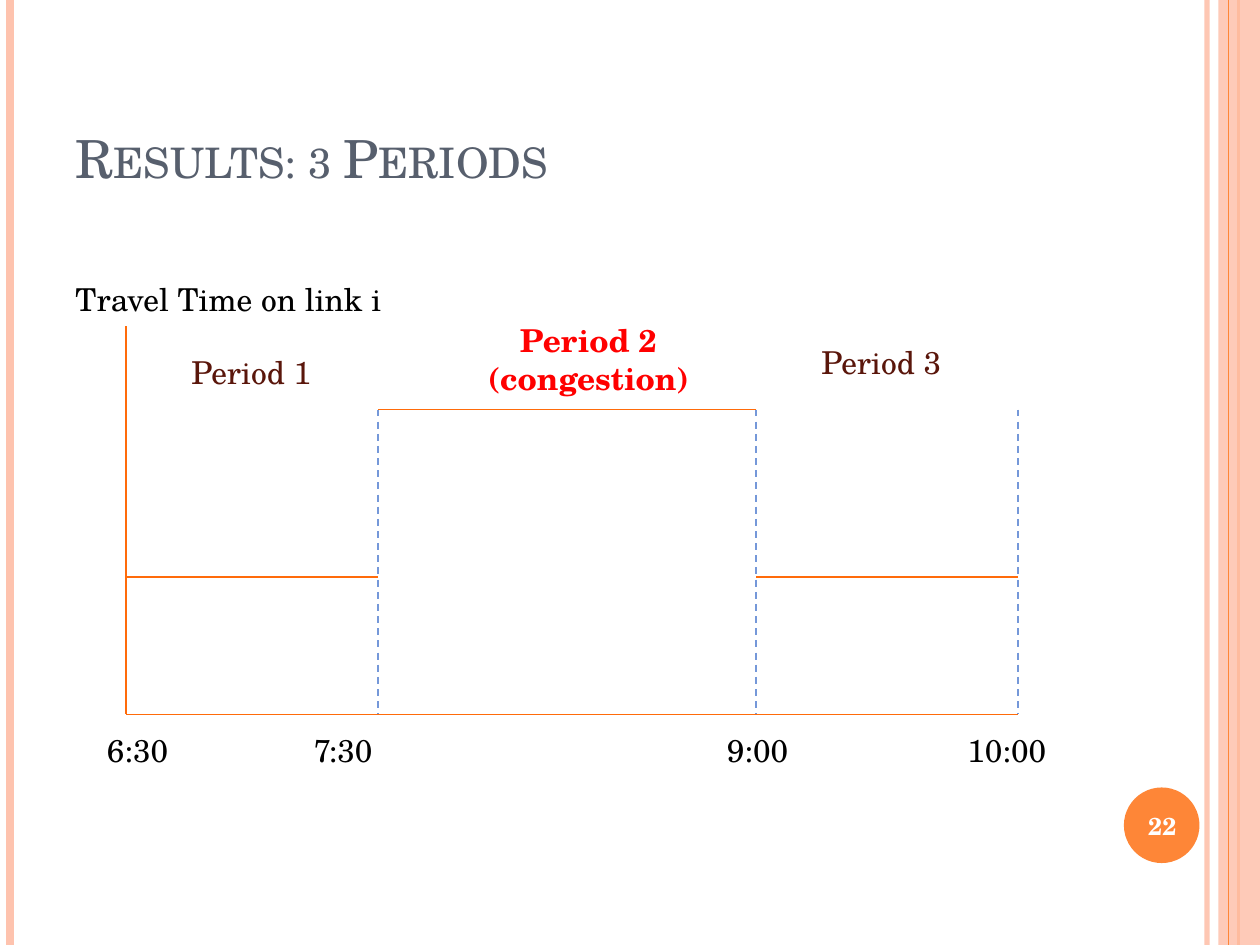
from pptx import Presentation
from pptx.dml.color import RGBColor
from pptx.enum.dml import MSO_LINE
from pptx.enum.shapes import MSO_CONNECTOR, MSO_SHAPE
from pptx.enum.text import MSO_ANCHOR, PP_ALIGN
from pptx.oxml.ns import qn
from pptx.util import Inches, Pt
from lxml import etree

STRAIGHT = MSO_CONNECTOR.STRAIGHT
RECT, OVAL = MSO_SHAPE.RECTANGLE, MSO_SHAPE.OVAL
DASH = MSO_LINE.DASH
LEFT, CENTER = PP_ALIGN.LEFT, PP_ALIGN.CENTER
TOP, MIDDLE, BOTTOM = MSO_ANCHOR.TOP, MSO_ANCHOR.MIDDLE, MSO_ANCHOR.BOTTOM
FONT = "TeX Gyre Schola"
WIDE, HIGH = 10, 7.5
PINK, ORANGE, AXIS, BLUE = "FEC3AE", "FE8637", "FF6B0A", "7598D9"
BLACK, BROWN, RED, WHITE, SLATE = "000000", "5A160B", "FF0000", "FFFFFF", "575F6D"

TITLE = "Results: 3 Periods"
BARS = [(9.58, PINK, 3, 93), (0.08, PINK, 4.5, 100), (9.83, ORANGE, 1.5, 100)]
TIMES = [("6:30", 0.75, 0.69), ("7:30", 2.39, 0.69),
         ("9:00", 5.67, 0.69), ("10:00", 7.58, 0.83)]
NAMES = [("Travel Time on link i", (0.5, 2.17, 2.83, 0.4), BLACK, LEFT, False),
         ("Period 1", (1.42, 2.75, 1.5, 0.42), BROWN, LEFT, False),
         ("Period 2 (congestion)", (3.67, 2.5, 2, 0.71), RED, CENTER, True),
         ("Period 3", (6.42, 2.67, 1.5, 0.42), BROWN, LEFT, False)]
EDGES = [1, 3, 6, 8.08]
LOW, PEAK, BASE, HEAD = 4.58, 3.25, 5.67, 2.59
LEVELS = [LOW, PEAK, LOW]


def paint(color, code):
    color.rgb = RGBColor.from_string(code)


def fade(fill, alpha):
    tone = fill._xPr.find(".//" + qn("a:srgbClr"))
    etree.SubElement(tone, qn("a:alpha")).set("val", str(alpha * 1000))


def rule(x1, y1, x2, y2, code, width=1, dash=None, alpha=100):
    line = slide.shapes.add_connector(STRAIGHT, *map(Inches, (x1, y1, x2, y2)))
    paint(line.line.color, code)
    line.line.width = Pt(width)
    if dash:
        line.line.dash_style = dash
    if alpha < 100:
        fade(line.line.fill, alpha)
    etree.SubElement(line._element.spPr, qn("a:effectLst"))


def block(kind, box, code, alpha=100):
    shape = slide.shapes.add_shape(kind, *map(Inches, box))
    shape.shadow.inherit = False
    shape.fill.solid()
    paint(shape.fill.fore_color, code)
    shape.line.fill.background()
    if alpha < 100:
        fade(shape.fill, alpha)


def write(frame, text, size, code, align=LEFT, bold=False, anchor=TOP, wrap=True):
    frame.word_wrap = wrap
    frame.vertical_anchor = anchor
    par = frame.paragraphs[0]
    par.alignment = align
    run = par.add_run()
    run.text = text
    run.font.name, run.font.size, run.font.bold = FONT, Pt(size), bold
    paint(run.font.color, code)
    return run


def label(text, box, *args, **more):
    frame = slide.shapes.add_textbox(*map(Inches, box)).text_frame
    write(frame, text, *args, **more)


deck = Presentation()
deck.slide_width, deck.slide_height = Inches(WIDE), Inches(HIGH)
slide = deck.slides.add_slide(deck.slide_layouts[5])

for x, code, width, alpha in BARS:
    rule(x, 0, x, HIGH, code, width, alpha=alpha)
block(RECT, (9.67, 0, 0.33, HIGH), PINK, 87)
rule(9.75, 0, 9.75, HIGH, ORANGE, 0.75)
block(OVAL, (8.92, 6.25, 0.6, 0.6), ORANGE)

title = slide.shapes.title
title.left, title.top, title.width, title.height = map(Inches, (0.5, 0.3, 8.17, 1.25))
run = write(title.text_frame, TITLE, 30, SLATE, anchor=BOTTOM)
run.font._element.set("cap", "small")
label("22", (8.89, 6.27, 0.67, 0.57), 14, WHITE, CENTER, True, MIDDLE)

rule(EDGES[0], HEAD, EDGES[0], BASE, AXIS)
rule(EDGES[0], BASE, EDGES[-1], BASE, AXIS)
for start, end, level in zip(EDGES, EDGES[1:], LEVELS):
    rule(start, level, end, level, AXIS)
for x in EDGES[1:]:
    rule(x, PEAK, x, BASE, BLUE, dash=DASH)

for text, x, width in TIMES:
    label(text, (x, 5.75, width, 0.4), 18, BLACK, wrap=False)
for text, box, code, align, bold in NAMES:
    label(text, box, 18, code, align, bold)

deck.save("out.pptx")
